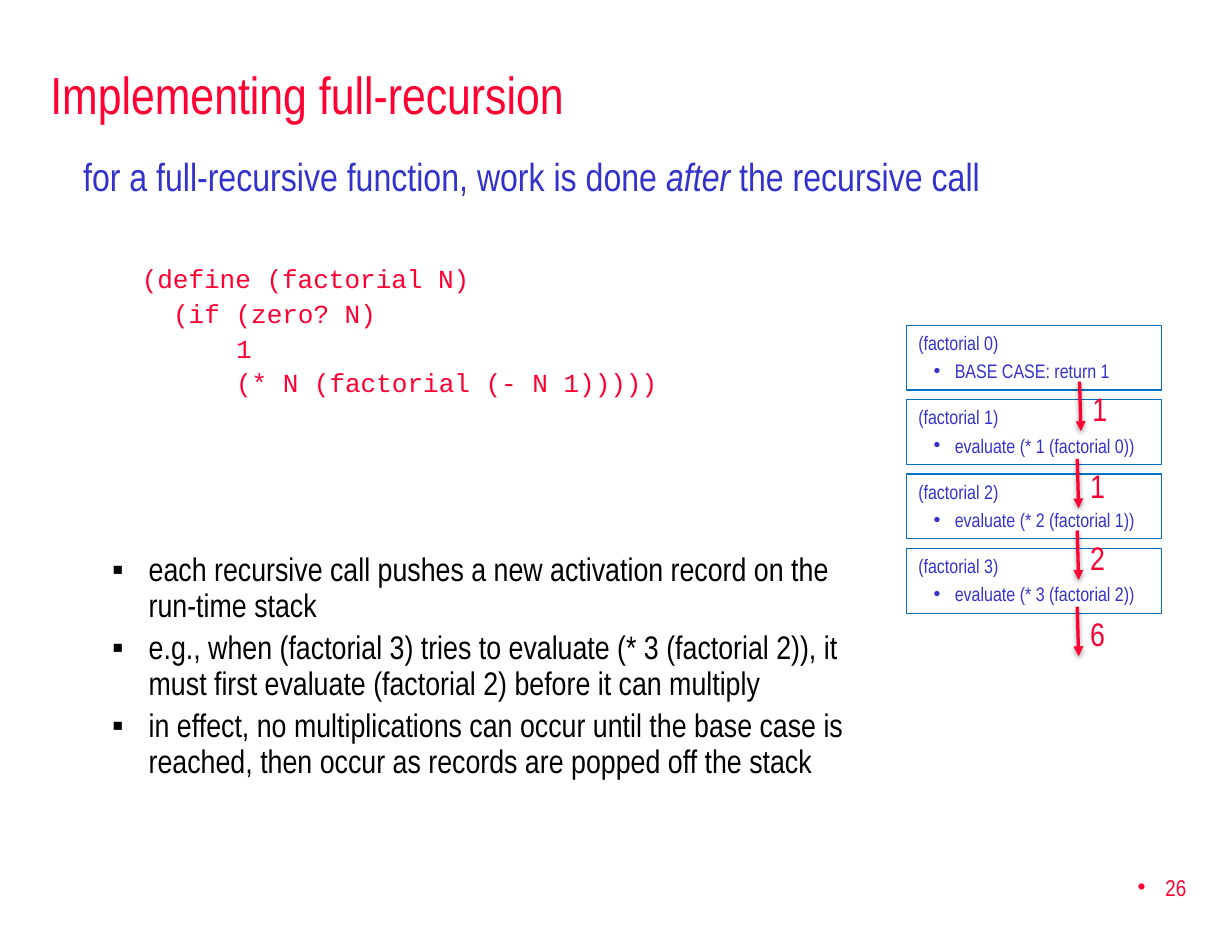
from dataclasses import dataclass
from typing import Any

from lxml.etree import SubElement
from pptx import Presentation
from pptx.dml.color import RGBColor as Rgb
from pptx.enum.shapes import MSO_CONNECTOR as Link, MSO_SHAPE as Preset
from pptx.enum.text import MSO_ANCHOR as Anchor, PP_ALIGN as Align
from pptx.oxml.ns import qn
from pptx.util import Cm, Pt


@dataclass(frozen=True)
class Theme:
    red: Rgb = Rgb(0xFF, 0x00, 0x33)
    blue: Rgb = Rgb(0x33, 0x33, 0xCC)
    black: Rgb = Rgb(0, 0, 0)
    border: Rgb = Rgb(0x00, 0x70, 0xC0)
    sans: str = "Arial Narrow"
    mono: str = "Courier New"
    title: float = 32
    lead: float = 24
    point: float = 20
    code: float = 16
    page: float = 14
    record: float = 12


THEME = Theme()


@dataclass(frozen=True)
class Line:
    text: str
    size: float
    color: Rgb
    font: str = THEME.sans
    left: float = 0
    hang: float = 0
    before: float = 0
    spacing: float = 1.0
    bullet: str = ""
    align: Align = Align.LEFT
    emphasis: str = ""


@dataclass(frozen=True)
class Record:
    call: str
    action: str


@dataclass(frozen=True)
class Result:
    value: str
    left: float
    top: float


def apply_format(target: Any, values: dict[str, Any]) -> None:
    for name, value in values.items():
        setattr(target, name, value)


def write_lines(frame: Any, lines: list[Line], anchor: Anchor = Anchor.TOP) -> None:
    apply_format(frame, {"word_wrap": True, "vertical_anchor": anchor})
    for index, line in enumerate(lines):
        paragraph = frame.add_paragraph() if index else frame.paragraphs[0]
        apply_format(paragraph, {
            "alignment": line.align,
            "line_spacing": line.spacing,
            "space_before": Pt(line.before),
        })
        properties = paragraph._p.get_or_add_pPr()
        properties.set("marL", str(Cm(line.left)))
        properties.set("indent", str(Cm(-line.hang)))
        if line.bullet:
            SubElement(properties, qn("a:buFont"), typeface="Arial")
            SubElement(properties, qn("a:buChar"), char=line.bullet)
        pieces = line.text.partition(line.emphasis) if line.emphasis else (line.text,)
        for piece in pieces:
            run = paragraph.add_run()
            run.text = piece
            apply_format(run.font, {
                "name": line.font,
                "size": Pt(line.size),
                "italic": piece == line.emphasis,
            })
            run.font.color.rgb = line.color


def add_text(shapes: Any, left: float, top: float, width: float, height: float,
             lines: list[Line], anchor: Anchor = Anchor.TOP) -> None:
    box = shapes.add_textbox(Cm(left), Cm(top), Cm(width), Cm(height))
    write_lines(box.text_frame, lines, anchor)


def add_record(shapes: Any, record: Record, top: float) -> None:
    frame = shapes.add_shape(Preset.RECTANGLE, Cm(19.63), Cm(top), Cm(5.51), Cm(1.4))
    frame.shadow.inherit = False
    frame.fill.background()
    frame.line.color.rgb = THEME.border
    frame.line.width = Pt(0.75)
    write_lines(frame.text_frame, [
        Line(record.call, THEME.record, THEME.blue),
        Line(record.action, THEME.record, THEME.blue, left=0.79, hang=0.46,
             before=2.8, bullet="•"),
    ])


def add_result(shapes: Any, result: Result) -> None:
    step = shapes.add_group_shape().shapes
    add_text(step, result.left + 0.03, result.top + 0.03, 0.91, 1.12,
             [Line(result.value, THEME.point, THEME.red)])
    arrow = step.add_connector(
        Link.STRAIGHT, Cm(result.left), Cm(result.top),
        Cm(result.left + 0.03), Cm(result.top + 1.07))
    arrow.line.color.rgb = THEME.red
    arrow.line.width = Pt(2)
    SubElement(arrow.line._get_or_add_ln(), qn("a:tailEnd"), type="triangle")
    effects = SubElement(arrow._element.spPr, qn("a:effectLst"))
    shadow = SubElement(effects, qn("a:outerShdw"), blurRad=str(Pt(3.1)),
                        dist=str(Pt(1.6)), dir="5400000", rotWithShape="0")
    shade = SubElement(shadow, qn("a:srgbClr"), val=str(THEME.black))
    SubElement(shade, qn("a:alpha"), val="38000")


CODE = [
    (0, "(define (factorial N)"),
    (2, "(if (zero? N)"),
    (6, "1"),
    (6, "(* N (factorial (- N 1)))))"),
]
POINTS = [
    "each recursive call pushes a new activation record on the run-time stack",
    "e.g., when (factorial 3) tries to evaluate (* 3 (factorial 2)), "
    "it must first evaluate (factorial 2) before it can multiply",
    "in effect, no multiplications can occur until the base case is reached, "
    "then occur as records are popped off the stack",
]
RECORDS = [Record("(factorial 0)", "BASE CASE: return 1")] + [
    Record(f"(factorial {n})", f"evaluate (* {n} (factorial {n - 1}))")
    for n in range(1, 4)
]
RESULTS = [
    Result("1", 23.37, 8.26),
    Result("1", 23.32, 9.93),
    Result("2", 23.32, 11.48),
    Result("6", 23.32, 13.13),
]


def main() -> None:
    deck = Presentation()
    apply_format(deck, {"slide_width": Cm(26.67), "slide_height": Cm(20.32)})
    shapes = deck.slides.add_slide(deck.slide_layouts[6]).shapes

    add_text(shapes, 20.37, 18.52, 5.56, 1.35, [
        Line("26", THEME.page, THEME.red, left=0.6, hang=0.6, bullet="•",
             align=Align.RIGHT)], Anchor.MIDDLE)
    add_text(shapes, 0.84, 1.07, 25.2, 1.9, [
        Line("Implementing full-recursion", THEME.title, THEME.red)], Anchor.MIDDLE)

    lead = Line("for a full-recursive function, work is done after the recursive call",
                THEME.lead, THEME.blue, left=0.97, hang=0.97, spacing=0.9,
                emphasis="after")
    code_lines = [
        Line(text, THEME.code, THEME.red, THEME.mono, left=1.27 + 0.34 * depth,
             before=4 if index else 41, spacing=0.9)
        for index, (depth, text) in enumerate(CODE)
    ]
    add_text(shapes, 1.55, 3.28, 20.4, 6.88, [lead, *code_lines])

    for level, record in enumerate(RECORDS):
        add_record(shapes, record, 7.04 + 1.61 * level)
    for result in RESULTS:
        add_result(shapes, result)

    add_text(shapes, 1.52, 11.86, 17.63, 5.97, [
        Line(point, THEME.point, THEME.black, left=1.45, hang=0.79,
             before=4.6 if index else 0, spacing=0.9, bullet="▪")
        for index, point in enumerate(POINTS)
    ])
    deck.save("out.pptx")


if __name__ == "__main__":
    main()
